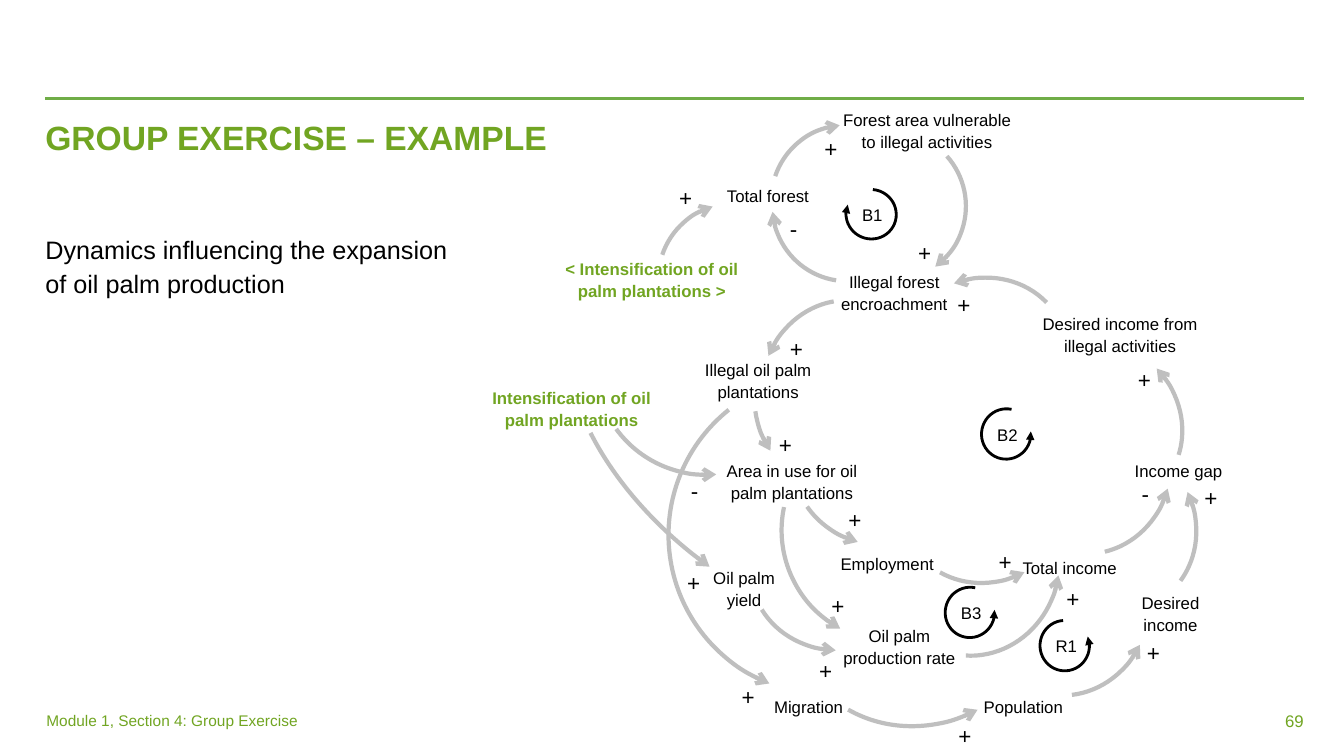
from lxml.etree import SubElement
from pptx import Presentation
from pptx.dml.color import RGBColor
from pptx.enum.shapes import MSO_CONNECTOR, MSO_SHAPE
from pptx.enum.text import MSO_ANCHOR as ANCHOR, PP_ALIGN as ALIGN
from pptx.oxml.ns import qn
from pptx.util import Inches, Pt

GREEN = RGBColor(0x71, 0xA5, 0x22)
RULE_GREEN = RGBColor(0x70, 0xAD, 0x47)
GREY = RGBColor(0xBF, 0xBF, 0xBF)
BLACK = RGBColor(0, 0, 0)
WIDTH, HEIGHT = 13.33, 7.5
MARGIN, RIGHT = 0.45, 12.93

VARIABLES = [
    ("Illegal oil palm plantations", 6.91, 3.5, 1.22, 0.4),
    ("Illegal forest encroachment", 8.26, 2.63, 1.22, 0.4),
    ("Desired income from illegal activities", 10.33, 3.04, 1.56, 0.4),
    ("Income gap", 10.91, 4.5, 1.56, 0.4),
    ("Forest area vulnerable to illegal activities", 8.3, 1.02, 1.79, 0.4),
    ("Area in use for oil palm plantations", 7.04, 4.5, 1.63, 0.4),
    ("Oil palm yield", 6.95, 5.56, 0.86, 0.4),
    ("Employment", 8.3, 5.42, 1, 0.26),
    ("Total income", 10.11, 5.46, 1, 0.26),
    ("Desired income", 11.11, 5.81, 1, 0.26),
    ("Population", 9.65, 6.84, 1, 0.26),
    ("Migration", 7.52, 6.84, 1, 0.26),
    ("Oil palm production rate", 8.33, 6.14, 1.18, 0.26),
]
DRIVERS = [
    ("Intensification of oil palm plantations", 4.88, 3.78, 1.58, 0.4),
    ("< Intensification of oil palm plantations >", 5.59, 2.5, 1.75, 0.58),
]
SIGNS = {
    "+": [(8.12, 1.27), (6.68, 1.75), (9.05, 2.3), (9.44, 2.81), (11.23, 3.56),
          (7.78, 3.25), (11.89, 4.73), (7.67, 4.2), (8.36, 4.95), (8.19, 5.8),
          (6.76, 5.57), (7.3, 6.7), (8.07, 6.44), (9.45, 7.09), (11.32, 6.27),
          (9.85, 5.36), (10.52, 5.73)],
    "-": [(7.75, 2.06), (11.24, 4.69), (6.77, 4.66)],
}
LOOPS = [
    ("B1", 8.39, 1.88, 202.2, "tailEnd"),
    ("B2", 9.73, 4.06, 282.2, "headEnd"),
    ("B3", 9.37, 5.83, 282.2, "headEnd"),
    ("R1", 10.31, 6.16, 266.4, "headEnd"),
]
FORWARD_LINKS = [
    (7.65, 1.24, 288.6, 270, 336.3),
    (8.09, 1.3, 48.3, 270, 5.36),
    (6.53, 2.02, 288.6, 270, 325.32),
    (7.66, 1.3, 188.7, 270, 346.92),
]
BACKWARD_LINKS = [
    (8.84, 2.77, 331.2, 280.17, 346.92),
    (9.98, 3.39, 37.5, 280.17, 342.64),
    (10.14, 4.39, 56.3, 280.17, 342.64),
    (9.91, 3.79, 96.7, 280.17, 342.64),
    (9.69, 5.2, 107.2, 280.17, 339.12),
    (8.79, 4.81, 113.6, 251.91, 342.64),
    (8.91, 4.12, 143.5, 280.17, 339.12),
    (7.86, 3.77, 186.7, 280.17, 322.82),
    (7.49, 3.04, 283.5, 280.17, 339.6),
    (7.45, 3.21, 227.4, 280.17, 309.25),
    (7.44, 4.81, 172.4, 280.17, 339.12),
]
LONG_LINKS = [
    (5.27, 3.04, 4.73, 2.69, 220.1, 255.69, 322.82),
    (5.9, 2.5, 2.22, 2.21, 165, 280.17, 339.12),
    (6.63, 3.72, 3.16, 3.17, 191.3, 280.17, 40.32),
    (7.75, 4.16, 2.22, 2.21, 213.1, 265.39, 339.12),
    (7.78, 4.65, 2.71, 2.52, 143.5, 280.17, 339.12),
]


def add_text(slide, text, x, y, w, h, size=12, color=BLACK, bold=False,
             align=ALIGN.CENTER, spacing=1.1, anchor=ANCHOR.TOP):
    """Add a wrapped text box without side insets."""
    tf = slide.shapes.add_textbox(Inches(x), Inches(y), Inches(w), Inches(h)).text_frame
    tf.word_wrap = True
    tf.vertical_anchor = anchor
    tf.margin_left = tf.margin_right = 0
    tf.text = text
    p = tf.paragraphs[0]
    p.alignment, p.line_spacing = align, spacing
    for r in p.runs:
        r.font.name, r.font.size, r.font.bold = "Arial", Pt(size), bold
        r.font.color.rgb = color


def add_arc(slide, x, y, w, h, rotation, start, end, arrow_at, arrow="arrow",
            color=GREY, weight=3):
    """Add a rotated arc with an arrowhead; start and end are in degrees."""
    sp = slide.shapes.add_shape(MSO_SHAPE.ARC, Inches(x), Inches(y), Inches(w), Inches(h))
    sp.shadow.inherit = False
    sp.rotation = rotation
    sp.adjustments[0], sp.adjustments[1] = start * 0.6, end * 0.6
    sp.fill.background()
    sp.line.color.rgb = color
    sp.line.width = Pt(weight)
    SubElement(sp.line._get_or_add_ln(), qn(f"a:{arrow_at}"), type=arrow)


def add_frame(slide, left, right):
    """Draw the top rule and the footer between two margins."""
    rule = slide.shapes.add_connector(
        MSO_CONNECTOR.STRAIGHT, Inches(left), Inches(0.98), Inches(right), Inches(0.98))
    rule.line.color.rgb = RULE_GREEN
    rule.line.width = Pt(2)
    SubElement(rule._element.spPr, qn("a:effectLst"))
    footer = dict(color=GREEN, spacing=1, anchor=ANCHOR.MIDDLE)
    add_text(slide, "Module 1, Section 4: Group Exercise", left + 0.01, 6.95, 5.95, 0.4,
             size=11, align=ALIGN.LEFT, **footer)
    add_text(slide, "69", right - 1.11, 6.95, 1.11, 0.4, align=ALIGN.RIGHT, **footer)


def add_heading(slide, x, y):
    """Place the title and the introduction below it."""
    add_text(slide, "GROUP EXERCISE – EXAMPLE", x, y, 5.07, 0.41, size=24,
             color=GREEN, bold=True, align=ALIGN.LEFT, spacing=0.9)
    add_text(slide, "Dynamics influencing the expansion\vof oil palm production",
             x, y + 1.09, 4.57, 0.81, size=18, align=ALIGN.LEFT)


def add_diagram(slide, left, top):
    """Draw the causal loop diagram from the given corner."""
    add_text(slide, "Total forest", left + 7.21, top + 1.77, 1.17, 0.4, align=ALIGN.LEFT)
    for text, x, y, w, h in VARIABLES:
        add_text(slide, text, left + x, top + y, w, h)
    for text, x, y, w, h in DRIVERS:
        add_text(slide, text, left + x, top + y, w, h, color=GREEN, bold=True)
    for sign, places in SIGNS.items():
        for x, y in places:
            add_text(slide, sign, left + x, top + y, 0.24, 0.26, size=16)
    for name, x, y, rotation, arrow_at in LOOPS:
        add_text(slide, name, left + x + 0.16, top + y + 0.08, 0.64, 0.4, align=ALIGN.LEFT)
        add_arc(slide, left + x, top + y, 0.5, 0.49, rotation, 71.94, 0, arrow_at,
                "triangle", BLACK, 2)
    for x, y, *angles in FORWARD_LINKS:
        add_arc(slide, left + x, top + y, 1.49, 1.49, *angles, "tailEnd")
    for x, y, *angles in BACKWARD_LINKS:
        add_arc(slide, left + x, top + y, 1.77, 1.64, *angles, "headEnd")
    for x, y, w, h, *angles in LONG_LINKS:
        add_arc(slide, left + x, top + y, w, h, *angles, "headEnd")


def main():
    """Build the slide and save it."""
    prs = Presentation()
    prs.slide_width, prs.slide_height = Inches(WIDTH), Inches(HEIGHT)
    slide = prs.slides.add_slide(prs.slide_layouts[6])
    add_frame(slide, MARGIN, RIGHT)
    add_heading(slide, MARGIN, 1.16)
    add_diagram(slide, 0, 0)
    prs.save("out.pptx")


if __name__ == "__main__":
    main()
